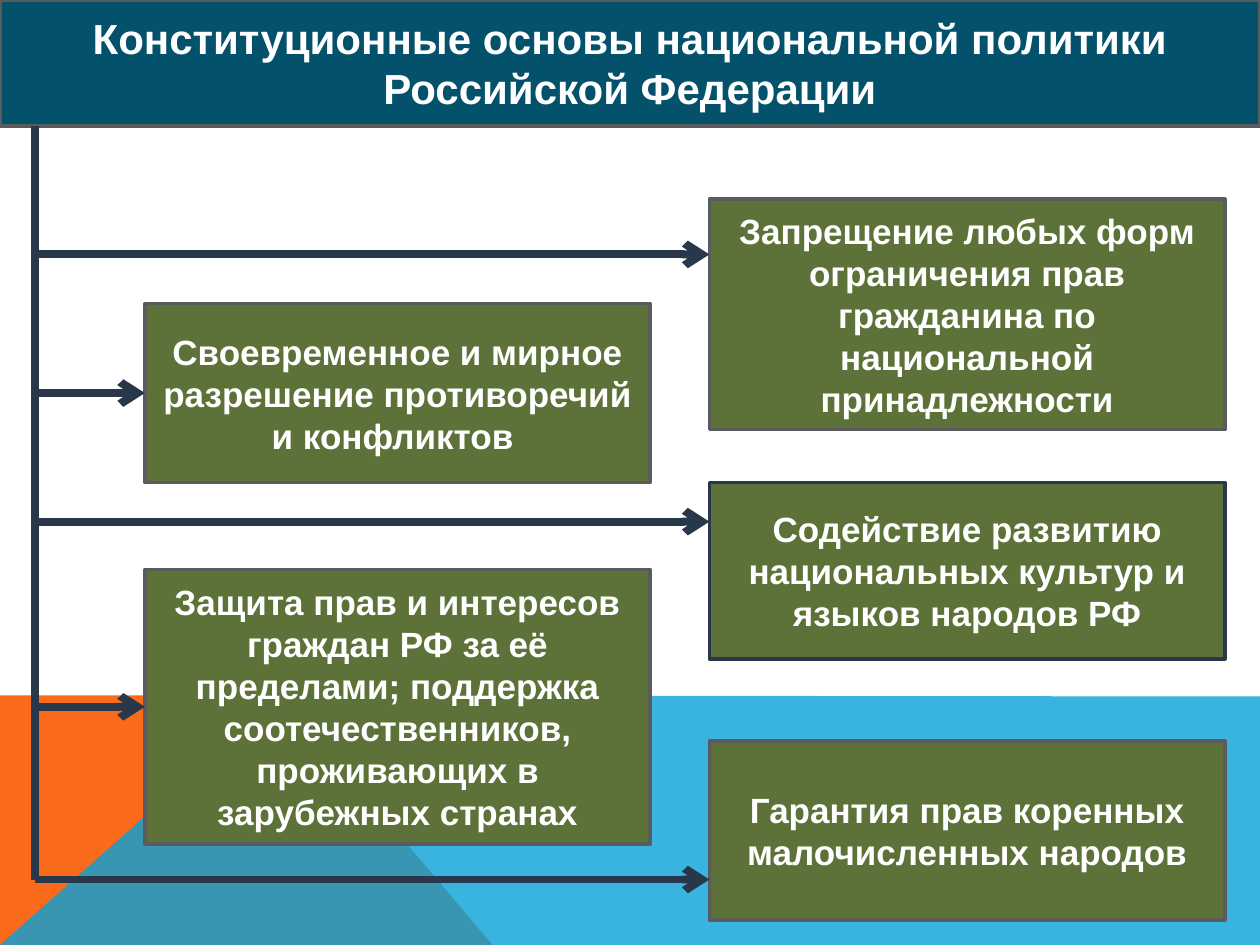
from lxml.etree import SubElement
from pptx import Presentation
from pptx.dml.color import RGBColor
from pptx.enum.shapes import MSO_CONNECTOR as CONNECTOR, MSO_SHAPE as SHAPE
from pptx.enum.text import MSO_ANCHOR as ANCHOR, PP_ALIGN as ALIGN
from pptx.oxml.ns import qn
from pptx.util import Pt

WIDTH, HEIGHT = 720, 540
NAVY, GREY, GREEN, TEAL = "28374A", "5A5B5D", "5D7238", "04516C"
TITLE = "Конституционные основы национальной политики Российской Федерации"
TITLE_HEIGHT = 72
TRUNK_X = 20.16
COLUMNS = {"left": (82.8, 288.7), "right": (405.4, 294.5)}  # x, width

# column, top, height, outline, arrow height (None: middle of the box), text
PRINCIPLES = [
    ("left", 173.5, 102.2, GREY, None,
     "Своевременное и мирное разрешение противоречий и конфликтов "),
    ("right", 113.8, 131.8, GREY, 145.4,
     "Запрещение любых форм ограничения прав гражданина по национальной принадлежности"),
    ("left", 325.4, 157, GREY, None,
     "Защита прав и интересов граждан РФ за её пределами; поддержка "
     "соотечественников, проживающих в зарубежных странах"),
    ("right", 275.8, 100.8, NAVY, 298.1,
     "Содействие развитию национальных культур и языков народов РФ"),
    ("right", 423.4, 102.2, GREY, 502.6,
     "Гарантия прав коренных малочисленных народов"),
]
TRUNK_END = 502.6

# colour, opacity in percent, corners
BACKDROP = [
    ("F96A1B", 100, [(0, 540), (0, 397.4), (160.6, 397.4), (281.5, 540)]),
    ("08A1D9", 80, [(0, 540), (160.6, 397.4), (720, 398), (720, 540)]),
]

deck = Presentation()
deck.slide_width, deck.slide_height = Pt(WIDTH), Pt(HEIGHT)
slide = deck.slides.add_slide(deck.slide_layouts[6])
shapes = slide.shapes


def rgb(value):
    return RGBColor.from_string(value)


def add_backdrop(color, opacity, corners):
    start, *others = [(Pt(x), Pt(y)) for x, y in corners]
    builder = shapes.build_freeform(*start)
    builder.add_line_segments(others, close=True)
    area = builder.convert_to_shape()
    area.shadow.inherit = False
    area.fill.solid()
    area.fill.fore_color.rgb = rgb(color)
    area.line.fill.background()
    if opacity < 100:
        tint = area.fill._xPr.find(qn("a:solidFill"))[0]
        SubElement(tint, qn("a:alpha"), val=str(opacity * 1000))


def add_box(text, x, y, width, height, fill=GREEN, outline=GREY, size=20):
    box = shapes.add_shape(SHAPE.RECTANGLE, Pt(x), Pt(y), Pt(width), Pt(height))
    box.shadow.inherit = False
    box.fill.solid()
    box.fill.fore_color.rgb = rgb(fill)
    box.line.color.rgb = rgb(outline)
    box.line.width = Pt(2)
    frame = box.text_frame
    frame.word_wrap = True
    frame.vertical_anchor = ANCHOR.MIDDLE
    paragraph = frame.paragraphs[0]
    paragraph.alignment = ALIGN.CENTER
    run = paragraph.add_run()
    run.text = text
    font = run.font
    font.name, font.size, font.bold = "Arial", Pt(size), True
    font.color.rgb = rgb("FFFFFF")
    return box


def add_line(x1, y1, x2, y2, arrow=False):
    line = shapes.add_connector(CONNECTOR.STRAIGHT, Pt(x1), Pt(y1), Pt(x2), Pt(y2))
    line.line.color.rgb = rgb(NAVY)
    line.line.width = Pt(4.5)
    if arrow:
        SubElement(line.line._get_or_add_ln(), qn("a:tailEnd"), type="arrow")
    SubElement(line._element.spPr, qn("a:effectLst"))
    return line


for color, opacity, corners in BACKDROP:
    add_backdrop(color, opacity, corners)

add_box(TITLE, 0, 0, WIDTH, TITLE_HEIGHT, fill=TEAL, size=24)
add_line(TRUNK_X, TITLE_HEIGHT, TRUNK_X, TRUNK_END)

for column, top, height, outline, arrow_y, text in PRINCIPLES:
    x, width = COLUMNS[column]
    principle = add_box(text, x, top, width, height, outline=outline)
    y = arrow_y or top + height / 2
    branch = add_line(TRUNK_X, y, x, y, arrow=True)
    if arrow_y is None:
        branch.end_connect(principle, 1)

deck.save("out.pptx")
